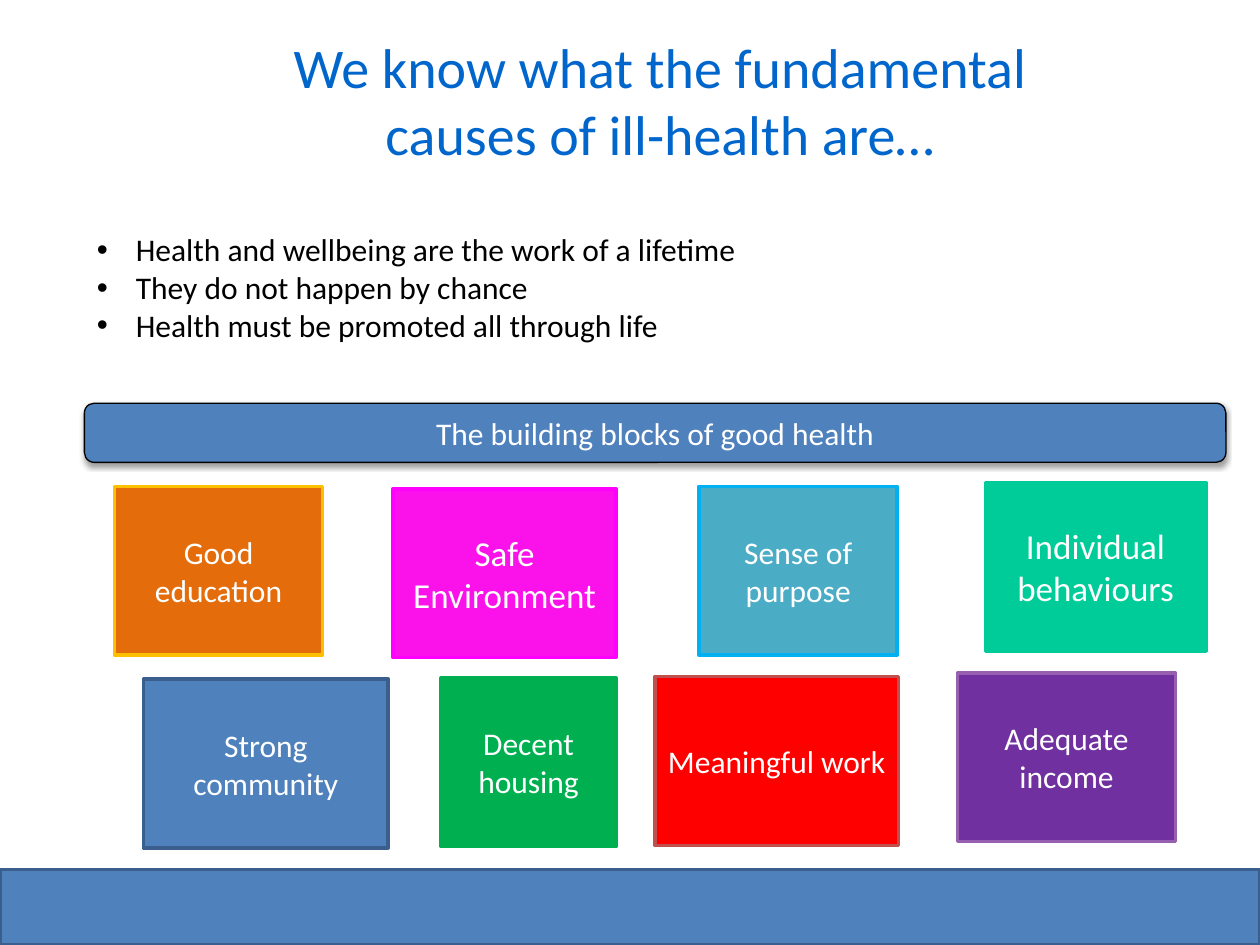
from dataclasses import dataclass

from lxml.etree import SubElement
from pptx import Presentation
from pptx.dml.color import RGBColor
from pptx.enum.shapes import MSO_SHAPE as Shape
from pptx.enum.text import MSO_ANCHOR as Anchor, PP_ALIGN as Align
from pptx.oxml.ns import qn
from pptx.util import Inches, Pt


@dataclass(frozen=True)
class Theme:
    font: str = "Calibri"
    title_size: int = 32
    body_size: int = 18
    large_size: int = 20
    border: float = 2
    thin_border: float = 0.75
    title: str = "0066CC"
    ink: str = "000000"
    paper: str = "FFFFFF"
    blue: str = "4F81BD"
    blue_edge: str = "3A5F8C"


BLOCK_HEIGHT = 1.34
THEME = Theme()

# label, left, top, width, fill, border, type size
BLOCKS = [
    ("Good education", 0.91, 3.86, 1.65, "E46C0A", "FFC000", THEME.body_size),
    ("Safe Environment", 3.12, 3.88, 1.77, "FB11EA", "FF00FF", THEME.large_size),
    ("Sense of purpose", 5.55, 3.86, 1.57, "4BACC6", "00B0F0", THEME.body_size),
    ("Individual behaviours", 7.82, 3.83, 1.75, "00CC99", "00CC99", THEME.large_size),
    ("Strong community", 1.14, 5.39, 1.94, THEME.blue, THEME.blue_edge, THEME.body_size),
    ("Decent housing", 3.5, 5.38, 1.39, "00B050", "00B050", THEME.body_size),
    ("Meaningful work", 5.2, 5.37, 1.93, "FF0000", "C0504D", THEME.body_size),
    ("Adequate income", 7.6, 5.34, 1.73, "7030A0", "965FAF", THEME.body_size),
]
MESSAGES = [
    "Health and wellbeing are the work of a lifetime",
    "They do not happen by chance",
    "Health must be promoted all through life",
]


class SlideBuilder:
    def __init__(self, slide, theme):
        self.slide = slide
        self.theme = theme

    def style(self, paragraph, size, color, align=Align.LEFT):
        paragraph.alignment = align
        for run in paragraph.runs:
            run.font.name = self.theme.font
            run.font.size = Pt(size)
            run.font.color.rgb = RGBColor.from_string(color)

    def title(self, text, left, top, width, height):
        title = self.slide.shapes.title
        title.left, title.top = Inches(left), Inches(top)
        title.width, title.height = Inches(width), Inches(height)
        frame = title.text_frame
        frame.text = text
        frame.word_wrap = True
        frame.vertical_anchor = Anchor.TOP
        self.style(frame.paragraphs[0], self.theme.title_size, self.theme.title, Align.CENTER)

    def bullets(self, items, left, top, width, height, indent=0.31):
        box = self.slide.shapes.add_textbox(
            Inches(left), Inches(top), Inches(width), Inches(height))
        frame = box.text_frame
        frame.word_wrap = True
        frame.text = "\n".join(items)
        for paragraph in frame.paragraphs:
            properties = paragraph._p.get_or_add_pPr()
            properties.set("marL", str(Inches(indent)))
            properties.set("indent", str(-Inches(indent)))
            SubElement(properties, qn("a:buFont"), typeface="Arial")
            SubElement(properties, qn("a:buChar"), char="•")
            self.style(paragraph, self.theme.body_size, self.theme.ink)

    def block(self, text, left, top, width, height, fill, edge,
              size=THEME.body_size, border=THEME.border, kind=Shape.RECTANGLE):
        block = self.slide.shapes.add_shape(
            kind, Inches(left), Inches(top), Inches(width), Inches(height))
        block.shadow.inherit = False
        block.fill.solid()
        block.fill.fore_color.rgb = RGBColor.from_string(fill)
        block.line.color.rgb = RGBColor.from_string(edge)
        block.line.width = Pt(border)
        if text:
            frame = block.text_frame
            frame.text = text
            frame.word_wrap = True
            frame.vertical_anchor = Anchor.MIDDLE
            frame.margin_left = frame.margin_right = Inches(0.08)
            self.style(frame.paragraphs[0], size, self.theme.paper, Align.CENTER)
        return block

    def banner(self, text, left, top, width, height):
        """Add a rounded heading bar with a soft shadow below it."""
        banner = self.block(text, left, top, width, height, self.theme.blue, self.theme.ink,
                            border=self.theme.thin_border, kind=Shape.ROUNDED_RECTANGLE)
        effects = banner._element.spPr.find(qn("a:effectLst"))
        shadow = SubElement(effects, qn("a:outerShdw"), blurRad=str(Pt(3.1)),
                            dist=str(Pt(1.6)), dir="5400000", rotWithShape="0")
        color = SubElement(shadow, qn("a:srgbClr"), val=self.theme.ink)
        SubElement(color, qn("a:alpha"), val="38000")


def main():
    deck = Presentation()
    deck.slide_width, deck.slide_height = Inches(10), Inches(7.5)
    title_only = deck.slide_layouts[5]
    builder = SlideBuilder(deck.slides.add_slide(title_only), THEME)

    builder.title("We know what the fundamental causes of ill-health are…",
                  2.01, 0.21, 6.46, 1.41)
    builder.block("", 0, 6.9, 10, 0.6, THEME.blue, THEME.blue_edge)
    builder.bullets(MESSAGES, 0.67, 1.78, 8.98, 1.31)
    builder.banner("The building blocks of good health", 0.67, 3.2, 9.06, 0.47)
    for label, left, top, width, fill, edge, size in BLOCKS:
        builder.block(label, left, top, width, BLOCK_HEIGHT, fill, edge, size)

    deck.save("out.pptx")


if __name__ == "__main__":
    main()
